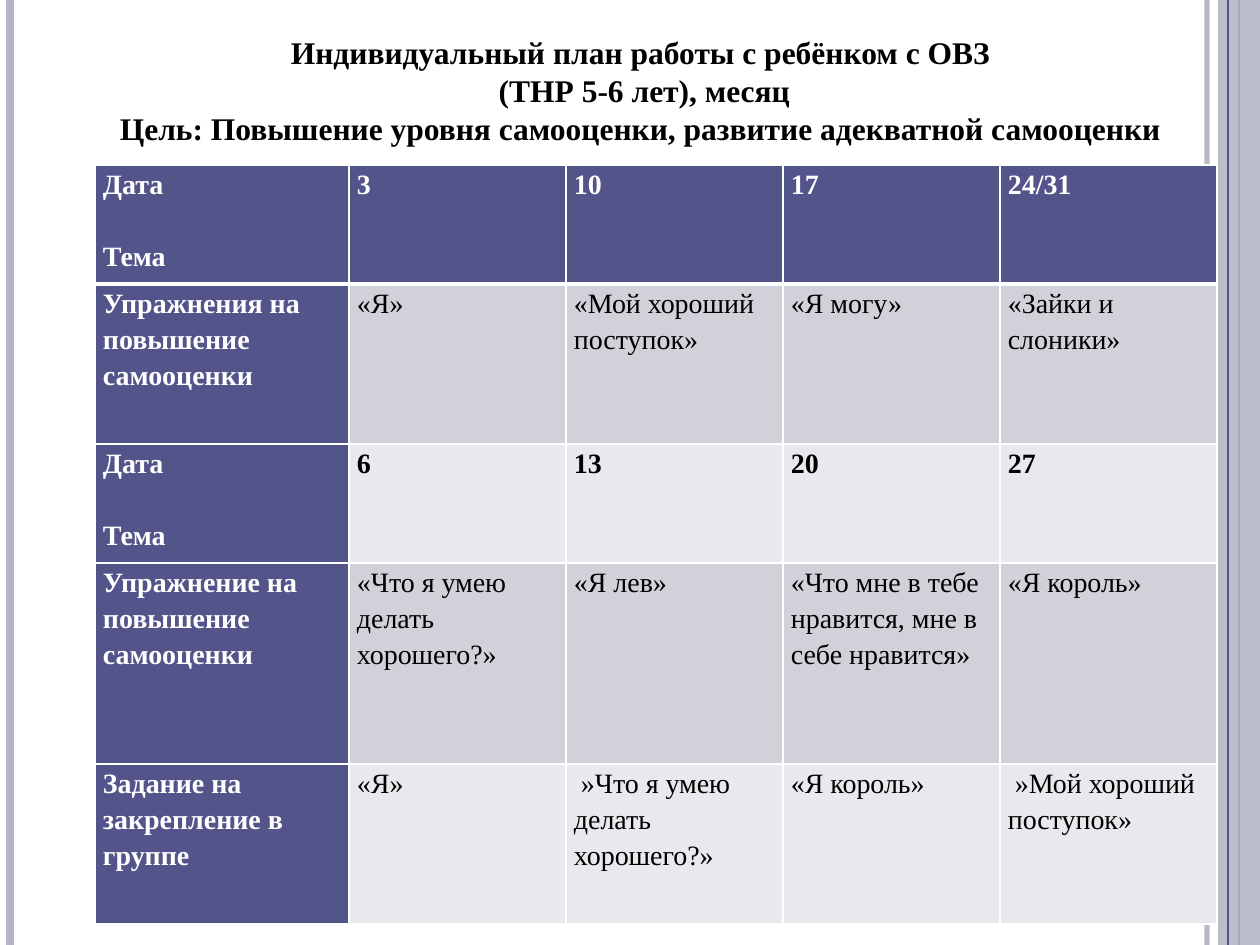
import pptx
import pptx.dml.color
import pptx.enum.shapes
import pptx.enum.text
import pptx.oxml
import pptx.oxml.ns
import pptx.util

PX = 914400 // 126
FONT = "Times New Roman"
ACCENT, RAIL, WHITE, BLACK = "53548A", "B3B4C4", "FFFFFF", "000000"
BANDS = ["D1D1DA", "E9E9ED"]
NAMESPACE = pptx.oxml.ns.nsdecls("a")


def paint(fill, color, alpha=100):
    """Fill solidly; alpha is opacity in percent."""
    fill.solid()
    fill.fore_color.rgb = pptx.dml.color.RGBColor.from_string(color)
    if alpha < 100:
        color_element = fill._xPr.find(".//" + pptx.oxml.ns.qn("a:srgbClr"))
        color_element.append(pptx.oxml.parse_xml(f'<a:alpha {NAMESPACE} val="{alpha * 1000}"/>'))


def write(frame, lines, size=16, color=BLACK, bold=False, align="LEFT", spacing=1.0, gap=0):
    """Write one paragraph per line, with gap points before each later one."""
    frame.word_wrap = True
    for index, text in enumerate(lines):
        paragraph = frame.paragraphs[0] if index == 0 else frame.add_paragraph()
        paragraph.alignment = getattr(pptx.enum.text.PP_ALIGN, align)
        paragraph.line_spacing = spacing
        paragraph.space_before = pptx.util.Pt(gap if index else 0)
        run = paragraph.add_run()
        run.text = text
        run.font.name = FONT
        run.font.size = pptx.util.Pt(size)
        run.font.bold = bold
        paint(run.font.fill, color)


presentation = pptx.Presentation()
presentation.slide_width = 1260 * PX
presentation.slide_height = 945 * PX
slide = presentation.slides.add_slide(presentation.slide_layouts[5])

# Vertical rails and the band on the right: x, width in points, colour, opacity
rails = [(1207, 3, RAIL, 93), (10, 4.5, RAIL, 100), (1239, 1.5, ACCENT, 100), (1228, 0.75, ACCENT, 100)]
for x, width, color, alpha in rails:
    if x == 1228:
        band = slide.shapes.add_shape(
            pptx.enum.shapes.MSO_SHAPE.RECTANGLE, 1218 * PX, 0, 42 * PX, 945 * PX)
        band.shadow.inherit = False
        band.line.fill.background()
        paint(band.fill, RAIL, 87)
    rail = slide.shapes.add_connector(
        pptx.enum.shapes.MSO_CONNECTOR.STRAIGHT, x * PX, 0, x * PX, 945 * PX)
    rail.line.width = pptx.util.Pt(width)
    paint(rail.line.fill, color, alpha)
    rail._element.spPr.append(pptx.oxml.parse_xml(f"<a:effectLst {NAMESPACE}/>"))

title = slide.shapes.title
title.left, title.top, title.width, title.height = 105 * PX, 27 * PX, 1071 * PX, 127 * PX
title.text_frame.vertical_anchor = pptx.enum.text.MSO_ANCHOR.TOP
title.text_frame.auto_size = pptx.enum.text.MSO_AUTO_SIZE.NONE
write(title.text_frame, [
    "Индивидуальный план работы с ребёнком с ОВЗ",
    " (ТНР 5-6 лет), месяц",
    "Цель: Повышение уровня самооценки, развитие адекватной самооценки",
], size=18, bold=True, align="CENTER")

plan = [
    ["Дата\nТема", "3", "10", "17", "24/31"],
    ["Упражнения на повышение самооценки", "«Я»", "«Мой хороший поступок»",
     "«Я могу»", "«Зайки и слоники»"],
    ["Дата\nТема", "6", "13", "20", "27"],
    ["Упражнение на повышение самооценки", "«Что я умею делать хорошего?»", "«Я лев»",
     "«Что мне в тебе нравится, мне в себе нравится»", "«Я король»"],
    ["Задание на закрепление в группе", "«Я»", "\u00a0»Что я умею делать хорошего?»",
     "«Я король»", "\u00a0»Мой хороший поступок»"],
]
column_widths = [254] + [217] * 4
row_heights = [119, 160, 119, 201, 160]
table = slide.shapes.add_table(
    len(plan), len(column_widths), 95 * PX, 165 * PX,
    sum(column_widths) * PX, sum(row_heights) * PX).table
for column, width in zip(table.columns, column_widths):
    column.width = width * PX
for row, height in zip(table.rows, row_heights):
    row.height = height * PX

for row_index, texts in enumerate(plan):
    for column_index, text in enumerate(texts):
        cell = table.cell(row_index, column_index)
        heading = row_index == 0 or column_index == 0
        cell.margin_left = cell.margin_right = 8 * PX
        cell.margin_top = cell.margin_bottom = 0
        write(cell.text_frame, text.split("\n"), color=WHITE if heading else BLACK,
              bold=heading or row_index == 2, spacing=1.15, gap=20.5)
        # Borders have to precede the fill in the cell properties
        properties = cell._tc.get_or_add_tcPr()
        for side in ["lnL", "lnR", "lnT", "lnB"]:
            thick = (row_index, side) in [(0, "lnB"), (1, "lnT")]
            properties.append(pptx.oxml.parse_xml(
                f'<a:{side} {NAMESPACE} w="{38100 if thick else 12700}"><a:solidFill>'
                f'<a:srgbClr val="{WHITE}"/></a:solidFill></a:{side}>'))
        paint(cell.fill, ACCENT if heading else BANDS[(row_index - 1) % 2])

presentation.save("out.pptx")
